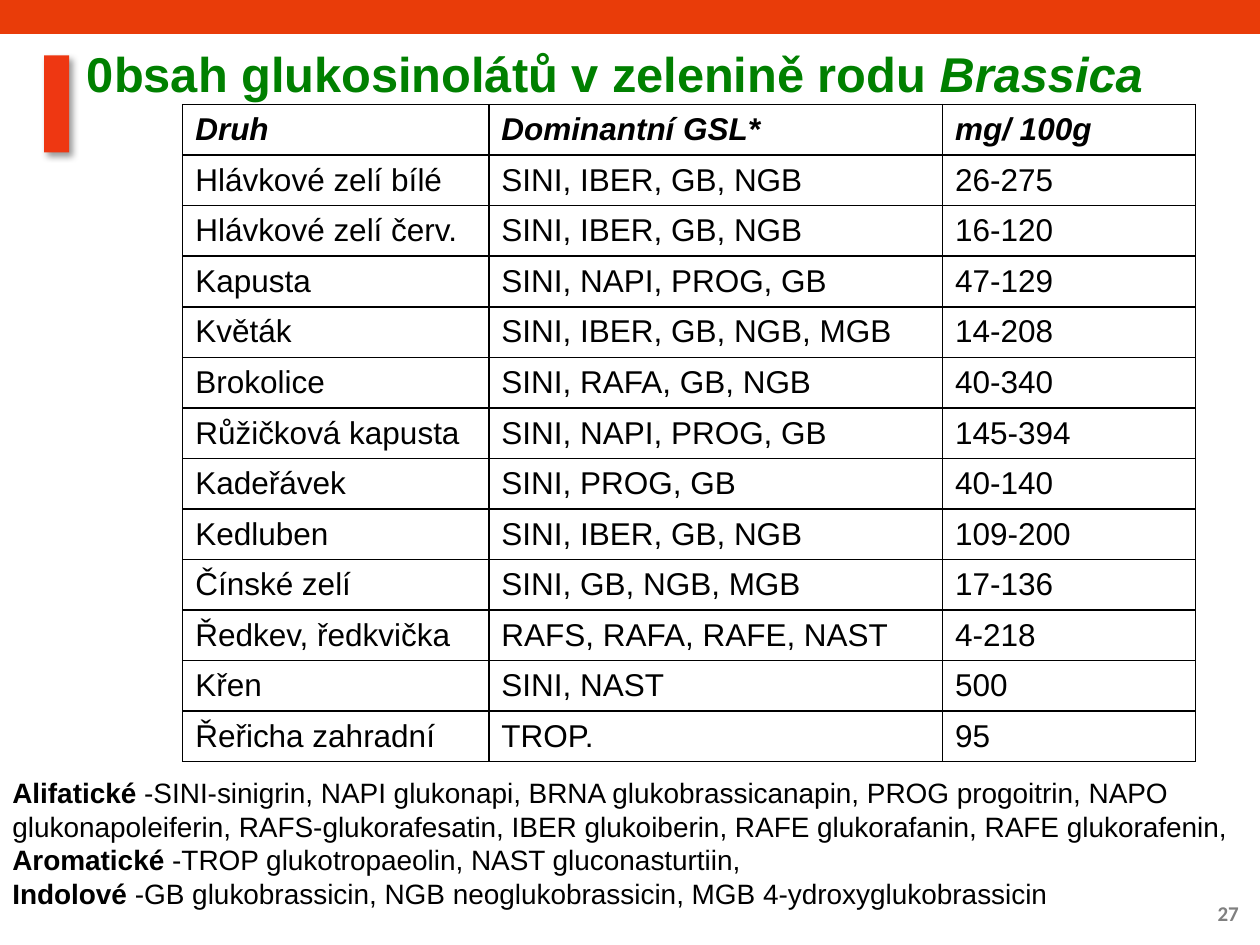
from lxml import etree
from pptx import Presentation
from pptx.dml.color import RGBColor
from pptx.enum.shapes import MSO_SHAPE
from pptx.enum.text import MSO_ANCHOR, MSO_AUTO_SIZE, PP_ALIGN
from pptx.oxml import parse_xml
from pptx.oxml.ns import nsdecls, qn
from pptx.util import Inches, Pt

COLORS = {
    "band": "E93C09",
    "accent": "EE3712",
    "title": "008000",
    "text": "000000",
    "border": "000000",
    "page": "808080",
}
TITLE_ONLY = 5

COLUMN_WIDTHS = (2.43, 3.6, 2.01)
HEADINGS = ("Druh", "Dominantní GSL*", "mg/ 100g")
VEGETABLES = (
    ("Hlávkové zelí bílé", "SINI, IBER, GB, NGB", "26-275"),
    ("Hlávkové zelí červ.", "SINI, IBER, GB, NGB", "16-120"),
    ("Kapusta", "SINI, NAPI, PROG, GB", "47-129"),
    ("Květák", "SINI, IBER, GB, NGB, MGB", "14-208"),
    ("Brokolice", "SINI, RAFA, GB, NGB", "40-340"),
    ("Růžičková kapusta", "SINI, NAPI, PROG, GB", "145-394"),
    ("Kadeřávek", "SINI, PROG, GB", "40-140"),
    ("Kedluben", "SINI, IBER, GB, NGB", "109-200"),
    ("Čínské zelí", "SINI, GB, NGB, MGB", "17-136"),
    ("Ředkev, ředkvička", "RAFS, RAFA, RAFE, NAST", "4-218"),
    ("Křen", "SINI, NAST", "500"),
    ("Řeřicha zahradní", "TROP.", "95"),
)
GROUPS = (
    ("Alifatické", " -SINI-sinigrin, NAPI glukonapi, BRNA glukobrassicanapin, "
     "PROG progoitrin, NAPO glukonapoleiferin, RAFS-glukorafesatin, "
     "IBER glukoiberin, RAFE glukorafanin, RAFE glukorafenin,"),
    ("Aromatické", " -TROP glukotropaeolin, NAST gluconasturtiin,"),
    ("Indolové", " -GB glukobrassicin, NGB neoglukobrassicin, "
     "MGB 4-ydroxyglukobrassicin"),
)


def rgb(name):
    return RGBColor.from_string(COLORS[name])


def format_run(run, size, color, bold=False, italic=False, face="Arial"):
    font = run.font
    font.name, font.size = face, Pt(size)
    font.bold, font.italic = bold, italic
    font.color.rgb = rgb(color)


def add_run(paragraph, text, *style, **options):
    run = paragraph.add_run()
    run.text = text
    format_run(run, *style, **options)


def add_bar(slide, box, color):
    bar = slide.shapes.add_shape(MSO_SHAPE.RECTANGLE, *box)
    bar.shadow.inherit = False
    bar.fill.solid()
    bar.fill.fore_color.rgb = rgb(color)
    bar.line.fill.background()
    return bar


def add_shadow(bar):
    effects = bar._element.spPr.find(qn("a:effectLst"))
    effects.append(parse_xml(
        f'<a:outerShdw {nsdecls("a")} blurRad="{Pt(4)}" dist="{Pt(3)}" '
        'dir="2700000" algn="tl" rotWithShape="0"><a:srgbClr val="000000">'
        '<a:alpha val="40000"/></a:srgbClr></a:outerShdw>'))


def add_text_frame(slide, box):
    frame = slide.shapes.add_textbox(*box).text_frame
    frame.word_wrap = True
    frame.vertical_anchor = MSO_ANCHOR.MIDDLE
    return frame


def place_title(slide, box):
    title = slide.shapes.title
    title.left, title.top, title.width, title.height = box
    frame = title.text_frame
    frame.vertical_anchor = MSO_ANCHOR.TOP
    frame.margin_top = 0
    frame.auto_size = MSO_AUTO_SIZE.NONE
    heading = frame.paragraphs[0]
    heading.alignment = PP_ALIGN.LEFT
    heading.line_spacing = 0.9
    add_run(heading, "0bsah glukosinolátů v zelenině rodu ", 27.9, "title", bold=True)
    add_run(heading, "Brassica", 27.9, "title", bold=True, italic=True)


def set_borders(cell):
    """Draw a thin line on all four sides, ahead of the cell's fill."""
    properties = cell._tc.get_or_add_tcPr()
    for index, side in enumerate(("lnL", "lnR", "lnT", "lnB")):
        line = etree.Element(qn(f"a:{side}"), w=str(Pt(1)))
        fill = etree.SubElement(line, qn("a:solidFill"))
        etree.SubElement(fill, qn("a:srgbClr"), val=COLORS["border"])
        properties.insert(index, line)


def add_content_table(slide, box):
    rows = (HEADINGS, *VEGETABLES)
    table = slide.shapes.add_table(len(rows), len(HEADINGS), *box).table
    table.first_row = table.horz_banding = False
    for column, width in zip(table.columns, COLUMN_WIDTHS):
        column.width = Inches(width)
    for row_index, values in enumerate(rows):
        is_heading = row_index == 0
        for column_index, value in enumerate(values):
            cell = table.cell(row_index, column_index)
            cell.text = value
            cell.vertical_anchor = MSO_ANCHOR.MIDDLE
            cell.fill.background()
            set_borders(cell)
            format_run(cell.text_frame.paragraphs[0].runs[0], 18, "text",
                       bold=is_heading, italic=is_heading)


def add_abbreviations(slide, box):
    frame = add_text_frame(slide, box)
    frame.auto_size = MSO_AUTO_SIZE.SHAPE_TO_FIT_TEXT
    for index, (group, members) in enumerate(GROUPS):
        paragraph = frame.add_paragraph() if index else frame.paragraphs[0]
        add_run(paragraph, group, 16, "text", bold=True)
        add_run(paragraph, members, 16, "text")


def add_page_number(slide, box):
    paragraph = add_text_frame(slide, box).paragraphs[0]
    paragraph.alignment = PP_ALIGN.RIGHT
    add_run(paragraph, "27", 12, "page", bold=True, face="Calibri")


def inches(*lengths):
    return tuple(Inches(length) for length in lengths)


def main():
    deck = Presentation()
    deck.slide_width, deck.slide_height = inches(10, 7.5)
    slide = deck.slides.add_slide(deck.slide_layouts[TITLE_ONLY])
    add_bar(slide, inches(0, 0, 10, 0.27), "band")
    add_shadow(add_bar(slide, inches(0.35, 0.44, 0.2, 0.77), "accent"))
    add_page_number(slide, inches(9.25, 7.05, 0.68, 0.4))
    add_content_table(slide, inches(1.45, 0.83, 8.03, 5.22))
    add_abbreviations(slide, inches(0, 6.1, 10, 1.18))
    place_title(slide, inches(0.59, 0.4, 9.14, 0.98))
    deck.save("out.pptx")


if __name__ == "__main__":
    main()
